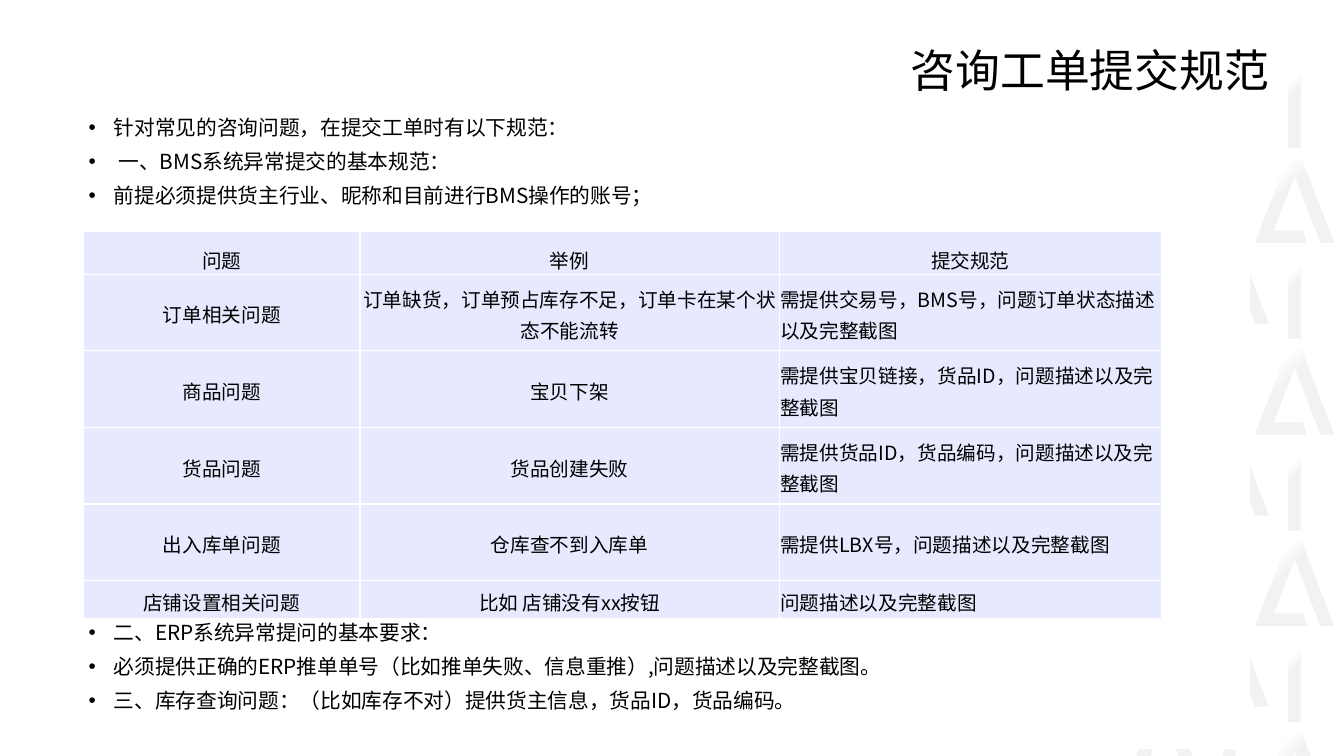
from pptx import Presentation
from pptx.dml.color import RGBColor
from pptx.enum.shapes import MSO_SHAPE as Shape
from pptx.enum.text import MSO_ANCHOR as Anchor, PP_ALIGN as Align
from pptx.oxml import parse_xml
from pptx.oxml.ns import nsdecls, qn
from pptx.util import Pt

SCALE = 9144  # EMU per px, 100 px to the inch
FONT = "Noto Sans CJK SC"
BLACK, WHITE, GREY, LILAC = "000000", "FFFFFF", "F2F2F2", "E7EAFF"

# Background letters
PEAK_OUTLINE = [(46, 0), (32, 0), (0, 83), (51, 83), (47, 71),
                (18, 71), (39, 16), (65, 83), (78, 83)]
PATTERN_STEP = 190

# Wording
TITLE = "咨询工单提交规范"
OPENING = [
    "针对常见的咨询问题，在提交工单时有以下规范：",
    " 一、BMS系统异常提交的基本规范：",
    "前提必须提供货主行业、昵称和目前进行BMS操作的账号；",
]
CLOSING = [
    "二、ERP系统异常提问的基本要求：",
    "必须提供正确的ERP推单单号（比如推单失败、信息重推）,问题描述以及完整截图。",
    "三、库存查询问题：（比如库存不对）提供货主信息，货品ID，货品编码。",
]
RULES = [
    ("问题", "举例", "提交规范"),
    ("订单相关问题", "订单缺货，订单预占库存不足，订单卡在某个状态不能流转",
     "需提供交易号，BMS号，问题订单状态描述以及完整截图"),
    ("商品问题", "宝贝下架", "需提供宝贝链接，货品ID，问题描述以及完整截图"),
    ("货品问题", "货品创建失败", "需提供货品ID，货品编码，问题描述以及完整截图"),
    ("出入库单问题", "仓库查不到入库单", "需提供LBX号，问题描述以及完整截图"),
    ("店铺设置相关问题", "比如 店铺没有xx按钮", "问题描述以及完整截图"),
]
COLUMN_WIDTHS = [274, 416, 379]
ROW_HEIGHTS = [42, 76, 76, 76, 76, 38]


def px(*lengths):
    return [length * SCALE for length in lengths]


def color(value):
    return RGBColor.from_string(value)


def apply(target, formats):
    for name, value in formats.items():
        setattr(target, name, value)


def write(para, text, size, **formats):
    apply(para, formats)
    span = para.add_run()
    span.text = text
    apply(span.font, {"size": Pt(size), "name": FONT})
    span.font.color.rgb = color(BLACK)
    span.font._element.append(
        parse_xml(f'<a:ea {nsdecls("a")} typeface="{FONT}"/>'))


def add_bullet(para):
    props = para._p.get_or_add_pPr()
    props.set("marL", str(25 * SCALE))
    props.set("indent", str(-25 * SCALE))
    props.append(parse_xml(f'<a:buFont {nsdecls("a")} typeface="Arial"/>'))
    props.append(parse_xml(f'<a:buChar {nsdecls("a")} char="•"/>'))


def write_bullets(box, lines):
    frame = box.text_frame
    apply(frame, {"word_wrap": True, "vertical_anchor": Anchor.TOP})
    for index, line in enumerate(lines):
        para = frame.add_paragraph() if index else frame.paragraphs[0]
        add_bullet(para)
        write(para, line, 14.8, alignment=Align.LEFT, line_spacing=0.9,
              space_before=Pt(8.2 if index else 0))


def shade(shape):
    shape.shadow.inherit = False
    shape.line.fill.background()
    shape.fill.gradient()
    shape.fill.gradient_angle = 315
    for stop, position, value in zip(shape.fill.gradient_stops,
                                     (0.2, 0.4), (WHITE, GREY)):
        stop.position = position
        stop.color.rgb = color(value)


def add_peak(page, left, top):
    points = [(left + x, top + y) for x, y in PEAK_OUTLINE]
    builder = page.shapes.build_freeform(*points[0], scale=SCALE)
    builder.add_line_segments(points[1:], close=True)
    shade(builder.convert_to_shape())


def add_bar(page, left, top):
    shade(page.shapes.add_shape(Shape.RECTANGLE, *px(left, top, 12, 83)))


def add_pattern(page):
    add_peak(page, 1116, 697)
    add_bar(page, 1213, 713)
    for index in range(4):
        shift = index * PATTERN_STEP
        if index < 3:
            add_peak(page, 1180, 238 + shift)
        add_bar(page, 1278, 63 + shift)
        add_peak(page, 1245, 158 + shift)


def add_panel(page):
    panel = page.shapes.add_shape(Shape.RECTANGLE, *px(78, 112, 1162, 631))
    panel.shadow.inherit = False
    panel.fill.solid()
    panel.fill.fore_color.rgb = color(WHITE)
    panel.line.fill.background()
    return panel


def add_title(page):
    frame = page.shapes.add_textbox(*px(620, 29, 649, 72)).text_frame
    apply(frame, {"word_wrap": True, "vertical_anchor": Anchor.BOTTOM})
    write(frame.paragraphs[0], TITLE, 32, alignment=Align.RIGHT, line_spacing=0.9)


def add_borders(cell):
    props = cell._tc.get_or_add_tcPr()
    for index, side in enumerate(("lnL", "lnR", "lnT", "lnB")):
        props.insert(index, parse_xml(
            f'<a:{side} {nsdecls("a")} w="12700"><a:solidFill>'
            f'<a:srgbClr val="{WHITE}"/></a:solidFill></a:{side}>'))


def add_rules_table(page):
    table = page.shapes.add_table(
        len(RULES), len(COLUMN_WIDTHS),
        *px(83, 230, sum(COLUMN_WIDTHS), sum(ROW_HEIGHTS))).table
    apply(table, {"first_row": False, "horz_banding": False})
    for column, width in zip(table.columns, px(*COLUMN_WIDTHS)):
        column.width = width
    for row, height in zip(table.rows, px(*ROW_HEIGHTS)):
        row.height = height
    for r, texts in enumerate(RULES):
        for c, text in enumerate(texts):
            cell = table.cell(r, c)
            apply(cell, {"margin_left": SCALE, "margin_right": SCALE,
                         "margin_top": SCALE, "margin_bottom": 0,
                         "vertical_anchor": Anchor.MIDDLE if r else Anchor.BOTTOM})
            cell.fill.solid()
            cell.fill.fore_color.rgb = color(LILAC)
            add_borders(cell)
            align = Align.LEFT if r and c == 2 else Align.CENTER
            write(cell.text_frame.paragraphs[0], text, 14,
                  alignment=align, line_spacing=1.1)


def main():
    deck = Presentation()
    apply(deck, dict(zip(("slide_width", "slide_height"), px(1333, 750))))
    page = deck.slides.add_slide(deck.slide_layouts[6])

    # Background
    add_pattern(page)

    # Title and bullets
    write_bullets(add_panel(page), OPENING)
    write_bullets(page.shapes.add_textbox(*px(78, 613, 1162, 130)), CLOSING)
    add_title(page)

    # Table
    add_rules_table(page)

    deck.save("out.pptx")


if __name__ == "__main__":
    main()
